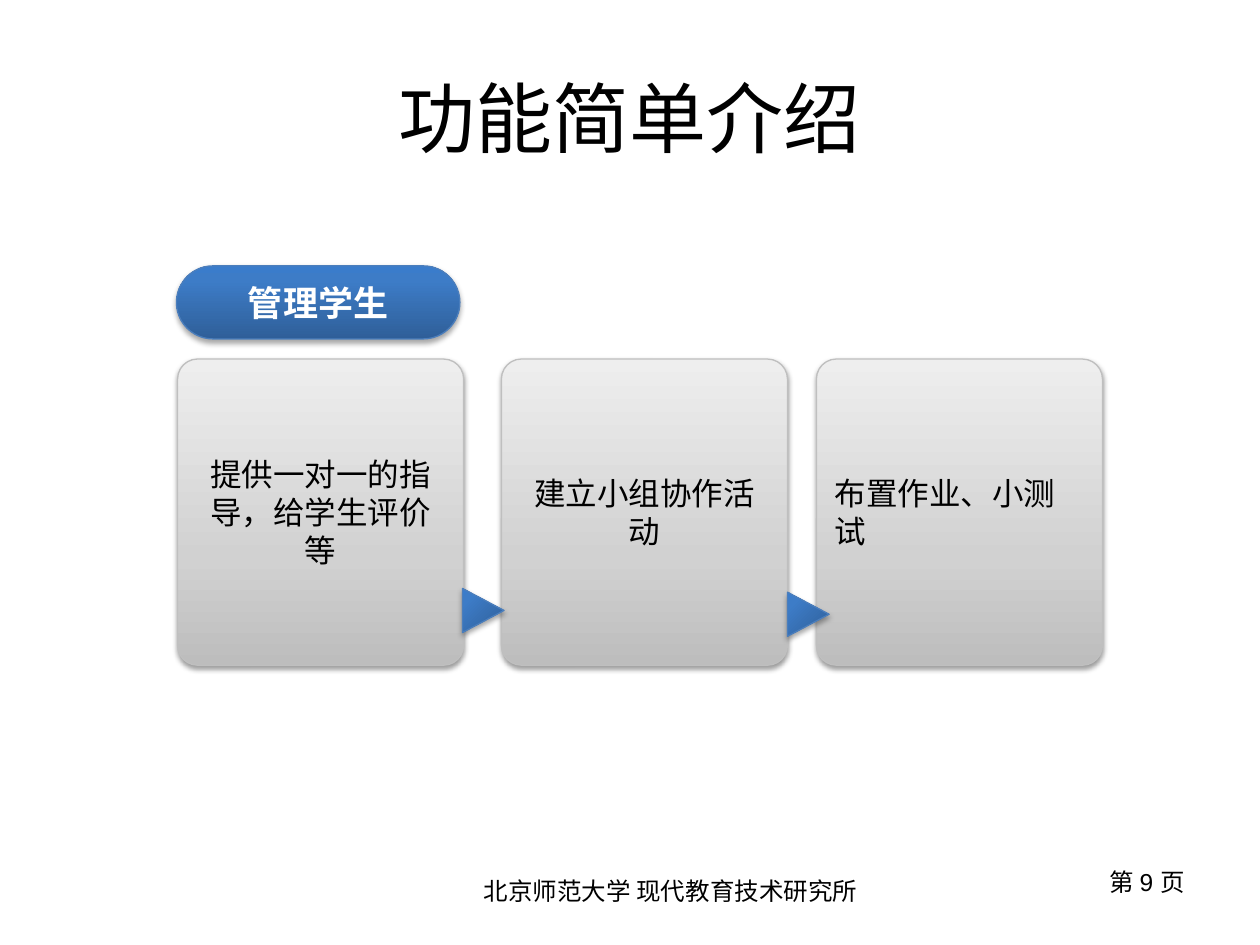
from copy import deepcopy

from lxml.etree import SubElement
from pptx import Presentation
from pptx.dml.color import RGBColor
from pptx.enum.shapes import MSO_SHAPE as Shape
from pptx.enum.text import MSO_ANCHOR as Anchor, PP_ALIGN as Align
from pptx.oxml.ns import qn
from pptx.util import Inches, Pt

BLACK = RGBColor(0x00, 0x00, 0x00)
WHITE = RGBColor(0xFF, 0xFF, 0xFF)
BLUE_EDGE = RGBColor(0x4B, 0x7E, 0xBC)
GRAY_EDGE = RGBColor(0xBF, 0xBF, 0xBF)
BLUE_STOPS = [(0, RGBColor(0x2F, 0x5F, 0x99)), (0.8, RGBColor(0x3D, 0x7C, 0xC7)),
              (1, RGBColor(0x3A, 0x7C, 0xCB))]
GRAY_STOPS = [(0, RGBColor(0xBD, 0xBD, 0xBD)), (0.35, RGBColor(0xD1, 0xD1, 0xD1)),
              (1, RGBColor(0xEE, 0xEE, 0xEE))]
CJK_FONT = "Noto Sans CJK SC"

CARD_TOP, CARD_WIDTH, CARD_HEIGHT = 2.85, 2.27, 2.43
CARDS = [(1.41, "提供一对一的指导，给学生评价等", Align.CENTER),
         (3.98, "建立小组协作活动", Align.CENTER),
         (6.48, "布置作业、小测试", Align.LEFT)]
ARROWS = [(3.66, 4.68), (6.24, 4.71)]


def set_text(frame, text, size, align, font="Arial", color=BLACK, bold=False):
    frame.text = text
    paragraph = frame.paragraphs[0]
    paragraph.alignment = align
    style = paragraph.font
    style.size, style.name, style.bold = Pt(size), font, bold
    style.color.rgb = color
    defaults = paragraph._p.get_or_add_pPr().find(qn("a:defRPr"))
    SubElement(defaults, qn("a:ea"), typeface=CJK_FONT)


def set_gradient(shape, stops, angle):
    """Fill with three stops; the angle runs counter-clockwise."""
    shape.fill.gradient()
    shape.fill.gradient_angle = angle
    stop_list = shape._element.spPr.find(qn("a:gradFill")).find(qn("a:gsLst"))
    stop_list.append(deepcopy(stop_list[-1]))
    for stop, (position, color) in zip(shape.fill.gradient_stops, stops):
        stop.position = position
        stop.color.rgb = color


def set_shadow(shape, opacity, distance):
    shape.shadow.inherit = False
    effects = shape._element.spPr.find(qn("a:effectLst"))
    shadow = SubElement(effects, qn("a:outerShdw"), blurRad=str(Pt(3.1)),
                        dist=str(Pt(distance)), dir="5400000", rotWithShape="0")
    color = SubElement(shadow, qn("a:srgbClr"), val=str(BLACK))
    SubElement(color, qn("a:alpha"), val=str(opacity * 1000))


def add_panel(slide, preset, box, stops, angle, edge, opacity, distance):
    panel = slide.shapes.add_shape(preset, *map(Inches, box))
    set_gradient(panel, stops, angle)
    panel.line.color.rgb = edge
    panel.line.width = Pt(0.75)
    set_shadow(panel, opacity, distance)
    return panel


def add_heading(slide, box, text):
    heading = add_panel(slide, Shape.ROUNDED_RECTANGLE, box, BLUE_STOPS, 90,
                        BLUE_EDGE, 35, 1.8)
    heading.adjustments[0] = 0.5
    heading.text_frame.word_wrap = False
    set_text(heading.text_frame, text, 20, Align.CENTER, "Calibri", WHITE, True)


def add_card(slide, box, text, align):
    card = add_panel(slide, Shape.ROUNDED_RECTANGLE, box, GRAY_STOPS, 90,
                     GRAY_EDGE, 38, 1.6)
    card.adjustments[0] = 0.07
    card.text_frame.word_wrap = True
    set_text(card.text_frame, text, 18, align)


def add_arrow(slide, box):
    arrow = add_panel(slide, Shape.FLOWCHART_EXTRACT, box, BLUE_STOPS, 225,
                      BLUE_EDGE, 35, 1.8)
    arrow.rotation = 90


def add_label(slide, box, text, align, font="Arial"):
    label = slide.shapes.add_textbox(*map(Inches, box))
    label.text_frame.word_wrap = True
    set_text(label.text_frame, text, 14, align, font)


def add_title(slide, box, text):
    title = slide.shapes.title
    title.left, title.top, title.width, title.height = map(Inches, box)
    title.text_frame.vertical_anchor = Anchor.MIDDLE
    set_text(title.text_frame, text, 44, Align.CENTER)


def main():
    deck = Presentation()
    deck.slide_width, deck.slide_height = Inches(10), Inches(7.5)
    slide = deck.slides.add_slide(deck.slide_layouts[5])
    add_title(slide, (0.5, 0.3, 9, 1.25), "功能简单介绍")
    add_label(slide, (3.74, 6.9, 4.41, 0.64), "北京师范大学 现代教育技术研究所",
              Align.LEFT, CJK_FONT)
    add_label(slide, (7.17, 6.83, 2.33, 0.52), "第 9 页", Align.RIGHT)
    add_heading(slide, (1.4, 2.11, 2.25, 0.58), "管理学生")
    for left, text, align in CARDS:
        add_card(slide, (left, CARD_TOP, CARD_WIDTH, CARD_HEIGHT), text, align)
    for left, top in ARROWS:
        add_arrow(slide, (left, top, 0.35, 0.33))
    deck.save("out.pptx")


if __name__ == "__main__":
    main()
